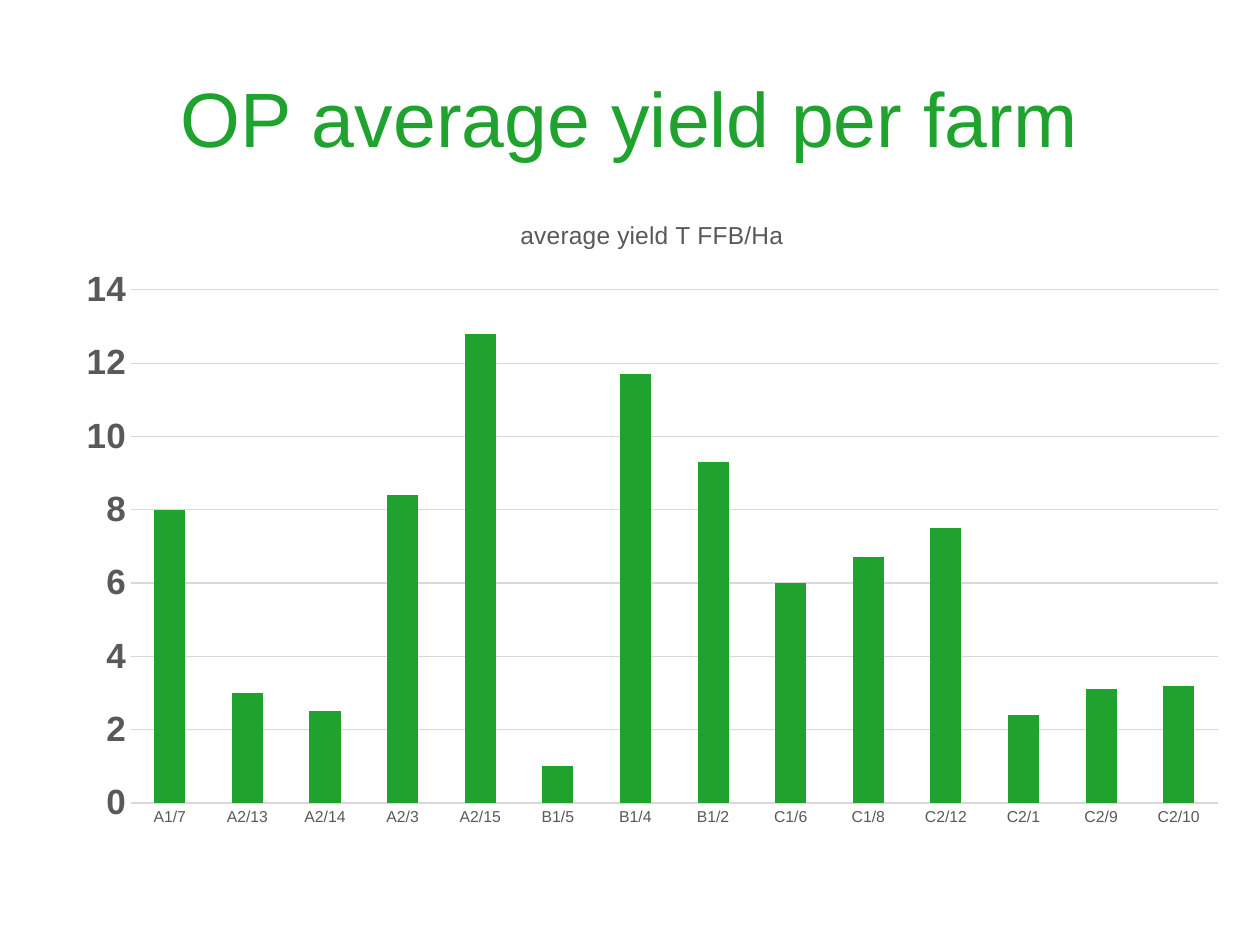
from dataclasses import dataclass

from pptx import Presentation
from pptx.chart.data import CategoryChartData
from pptx.dml.color import RGBColor
from pptx.enum.chart import XL_CHART_TYPE, XL_TICK_MARK
from pptx.enum.text import MSO_ANCHOR, PP_ALIGN
from pptx.util import Cm, Pt


@dataclass(frozen=True)
class Theme:
    face: str = "Arial"
    green: str = "1FA22E"
    gray: str = "595959"
    grid: str = "D9D9D9"
    head: int = 44
    title: int = 14
    value: int = 20
    label: int = 9


THEME = Theme()
NAME = "average yield T FFB/Ha"
YIELDS = {
    "A1/7": 8, "A2/13": 3, "A2/14": 2.5, "A2/3": 8.4, "A2/15": 12.8,
    "B1/5": 1, "B1/4": 11.7, "B1/2": 9.3, "C1/6": 6, "C1/8": 6.7,
    "C2/12": 7.5, "C2/1": 2.4, "C2/9": 3.1, "C2/10": 3.2,
}


def apply(item, form):
    for key, value in form.items():
        setattr(item, key, value)


def style(font, size, color, bold=False):
    apply(font, {"name": THEME.face, "size": Pt(size), "bold": bold})
    font.color.rgb = RGBColor.from_string(color)


def paint(fill, color):
    fill.solid()
    fill.fore_color.rgb = RGBColor.from_string(color)


def add_head(slide, text):
    box = slide.shapes.add_textbox(Cm(1.27), Cm(0.76), Cm(22.86), Cm(3.18))
    frame = box.text_frame
    apply(frame, {"word_wrap": True, "vertical_anchor": MSO_ANCHOR.MIDDLE})
    para = frame.paragraphs[0]
    apply(para, {"text": text, "alignment": PP_ALIGN.CENTER})
    style(para.runs[0].font, THEME.head, THEME.green)


def set_axis(axis, size, bold=False):
    apply(axis, {"major_tick_mark": XL_TICK_MARK.NONE,
                 "minor_tick_mark": XL_TICK_MARK.NONE})
    axis.format.line.fill.background()
    style(axis.tick_labels.font, size, THEME.gray, bold)


def add_chart(slide):
    data = CategoryChartData()
    data.categories = list(YIELDS)
    data.add_series(NAME, list(YIELDS.values()))
    chart = slide.shapes.add_chart(
        XL_CHART_TYPE.COLUMN_CLUSTERED,
        Cm(1.27), Cm(3.94), Cm(23.75), Cm(12.98), data).chart
    apply(chart, {"has_legend": False, "has_title": True})
    chart.font.name = THEME.face

    # Chart title
    frame = chart.chart_title.text_frame
    frame.text = NAME
    style(frame.paragraphs[0].runs[0].font, THEME.title, THEME.gray)
    chart.chart_title.include_in_layout = False

    # Axes and grid
    set_axis(chart.category_axis, THEME.label)
    axis = chart.value_axis
    set_axis(axis, THEME.value, bold=True)
    apply(axis, {"minimum_scale": 0, "maximum_scale": 14, "major_unit": 2,
                 "has_major_gridlines": True})
    line = axis.major_gridlines.format.line
    line.width = Pt(0.75)
    paint(line.fill, THEME.grid)

    # Columns
    plot = chart.plots[0]
    apply(plot, {"gap_width": 150, "vary_by_categories": False})
    paint(plot.series[0].format.fill, THEME.green)


def main():
    deck = Presentation()
    apply(deck, {"slide_width": Cm(25.4), "slide_height": Cm(19.05)})
    slide = deck.slides.add_slide(deck.slide_layouts[6])
    add_head(slide, "OP average yield per farm")
    add_chart(slide)
    deck.save("out.pptx")


if __name__ == "__main__":
    main()
